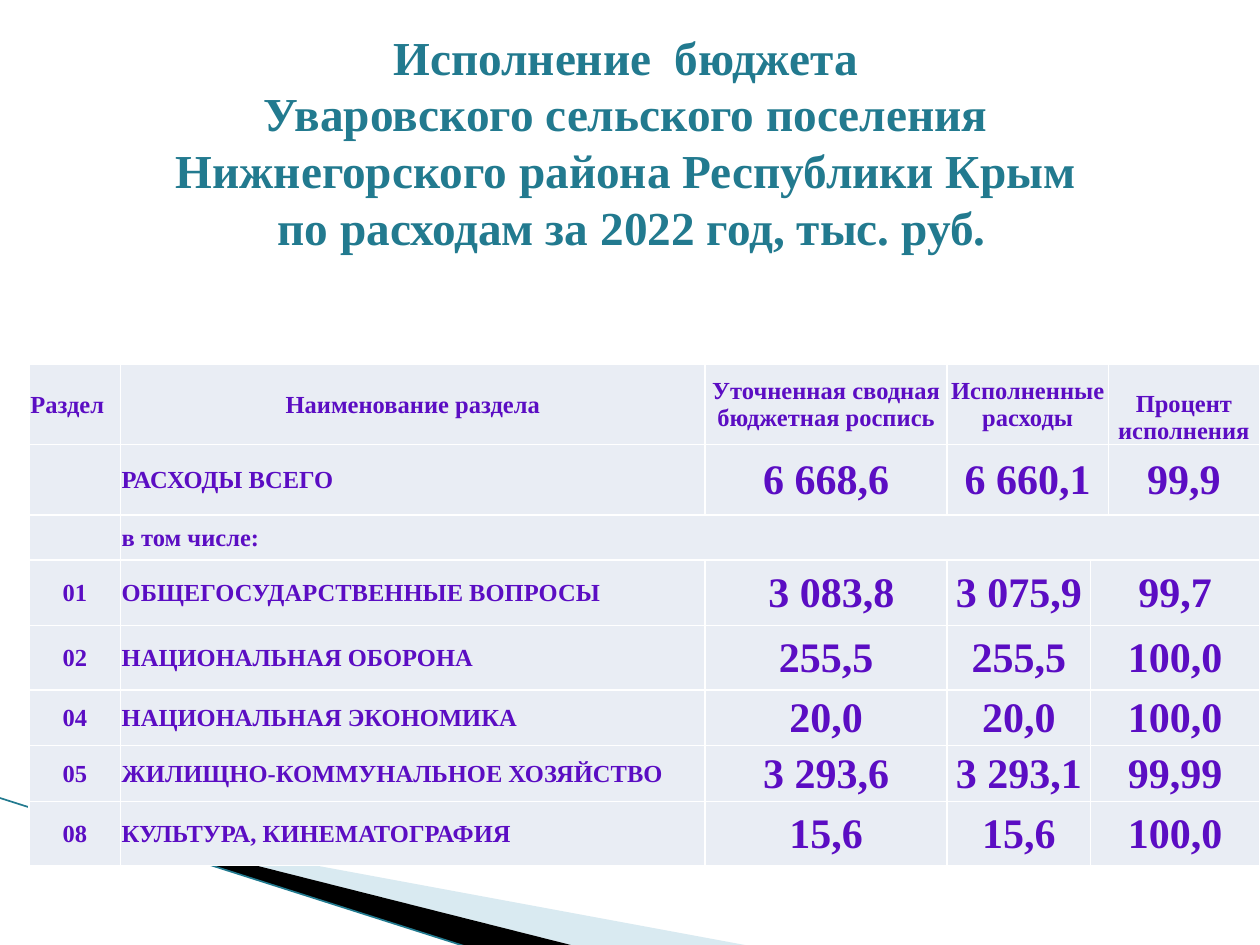
import dataclasses

import pptx
import pptx.dml.color
import pptx.enum.shapes
import pptx.enum.text
import pptx.oxml
import pptx.oxml.ns
import pptx.util

Pt = pptx.util.Pt
RGB = pptx.dml.color.RGBColor
ALIGN = pptx.enum.text.PP_ALIGN
ANCHOR = pptx.enum.text.MSO_ANCHOR
qn = pptx.oxml.ns.qn

TEAL = RGB(0x22, 0x7A, 0x8F)
PALE = RGB(0xA0, 0xCB, 0xDC)
BLACK = RGB(0, 0, 0)
VIOLET = RGB(0x5B, 0x0D, 0xC3)
CELL = RGB(0xE9, 0xED, 0xF4)
WHITE = RGB(0xFF, 0xFF, 0xFF)
FONT = "Times New Roman"

SMALL, BIG = 14, 24
COLS = (52.2, 334.1, 138.2, 82.1, 10.1, 86.4)


@dataclasses.dataclass
class Row:
    high: float
    texts: tuple[str, ...]
    span: tuple[int, int]  # first and last merged column


@dataclasses.dataclass
class Wedge:
    frame: tuple[float, float, float, float]  # the outline may leave it
    points: tuple[tuple[float, float], ...]
    color: RGB
    alpha: int  # percent


WEDGES = (
    Wedge((56.2, 393.8, 299.5, 113.8),
          ((39.6, 468.5), (428.4, 540.5), (328.3, 540.5), (39.6, 468)), PALE, 40),
    Wedge((-4.3, 455.8, 299.5, 66.2),
          ((38.2, 467.3), (329, 540.7), (267.8, 541.4), (38.9, 468)), BLACK, 100),
)

ROWS = (
    Row(45.9, ("Раздел", "Наименование раздела", "Уточненная сводная бюджетная роспись",
               "Исполненные расходы", "", "Процент исполнения"), (3, 4)),
    Row(40.4, ("", "РАСХОДЫ ВСЕГО", "6 668,6", "6 660,1", "", "99,9"), (3, 4)),
    Row(25.6, ("", "в том числе:", "", "", "", ""), (1, 5)),
    Row(37.6, ("01", "ОБЩЕГОСУДАРСТВЕННЫЕ ВОПРОСЫ", " 3 083,8", "3 075,9", "99,7", ""), (4, 5)),
    Row(36.7, ("02", "НАЦИОНАЛЬНАЯ ОБОРОНА", "255,5", "255,5", "100,0", ""), (4, 5)),
    Row(31.9, ("04", "НАЦИОНАЛЬНАЯ ЭКОНОМИКА", "20,0", "20,0", "100,0", ""), (4, 5)),
    Row(31.9, ("05", "ЖИЛИЩНО-КОММУНАЛЬНОЕ ХОЗЯЙСТВО", "3 293,6", "3 293,1", "99,99", ""), (4, 5)),
    Row(36.6, ("08", "КУЛЬТУРА, КИНЕМАТОГРАФИЯ", "15,6", "15,6", "100,0", ""), (4, 5)),
)

TITLE = ("Исполнение  бюджета \vУваровского сельского поселения \v"
         "Нижнегорского района Республики Крым \vпо расходам за 2022 год, тыс. руб.")


def write(frame, text: str, *, size: float, color: RGB, align=ALIGN.CENTER, pitch=None) -> None:
    """Fill a text frame; a vertical tab in the text breaks the line."""
    para = frame.paragraphs[0]
    para.text = text
    para.alignment = align
    if pitch:
        para.line_spacing = Pt(pitch)
    for font in (para.font, *(run.font for run in para.runs)):
        font.name, font.size, font.bold = FONT, Pt(size), True
        font.color.rgb = color


def draw_wedge(slide, wedge: Wedge) -> None:
    start, *rest = [(Pt(x), Pt(y)) for x, y in wedge.points]
    build = slide.shapes.build_freeform(*start)
    build.add_line_segments(rest, close=True)
    shape = build.convert_to_shape()
    shape.shadow.inherit = False
    shape.fill.solid()
    shape.fill.fore_color.rgb = wedge.color
    shape.line.fill.background()
    props = shape._element.spPr
    if wedge.alpha < 100:
        tint = props.find(qn("a:solidFill"))[0]
        tint.append(pptx.oxml.parse_xml(
            f'<a:alpha {pptx.oxml.ns.nsdecls("a")} val="{wedge.alpha * 1000}"/>'))
    # Set the frame and keep the outline in its place
    left, top, wide, high = (Pt(side) for side in wedge.frame)
    across, down = shape.left - left, shape.top - top
    shape.left, shape.top, shape.width, shape.height = left, top, wide, high
    for area in props.iter(qn("a:path")):
        area.set("w", str(int(wide)))
        area.set("h", str(int(high)))
    for point in props.iter(qn("a:pt")):
        point.set("x", str(int(point.get("x")) + across))
        point.set("y", str(int(point.get("y")) + down))


def draw_edge(slide) -> None:
    line = slide.shapes.add_connector(
        pptx.enum.shapes.MSO_CONNECTOR.STRAIGHT, Pt(-0.7), Pt(455.8), Pt(267.8), Pt(541.4))
    line.line.color.rgb = TEAL
    line.line.width = Pt(0.95)
    line._element.spPr.append(pptx.oxml.parse_xml(
        f"<a:effectLst {pptx.oxml.ns.nsdecls('a')}/>"))


def style_cell(cell) -> None:
    cell.margin_left = cell.margin_right = cell.margin_top = Pt(0.7)
    cell.margin_bottom = 0
    cell.vertical_anchor = ANCHOR.MIDDLE
    cell.fill.solid()
    cell.fill.fore_color.rgb = CELL
    # Borders come before the fill in the cell properties
    props = cell._tc.get_or_add_tcPr()
    for spot, side in enumerate("LRTB"):
        props.insert(spot, pptx.oxml.parse_xml(
            f'<a:ln{side} {pptx.oxml.ns.nsdecls("a")} w="{Pt(1)}"><a:solidFill>'
            f'<a:srgbClr val="{WHITE}"/></a:solidFill></a:ln{side}>'))


def draw_table(slide, rows: tuple[Row, ...]) -> None:
    table = slide.shapes.add_table(
        len(rows), len(COLS), Pt(16.7), Pt(208.1),
        Pt(sum(COLS)), Pt(sum(row.high for row in rows))).table
    for col, wide in zip(table.columns, COLS):
        col.width = Pt(wide)
    for r, row in enumerate(rows):
        table.rows[r].height = Pt(row.high)
        for c, text in enumerate(row.texts):
            cell = table.cell(r, c)
            style_cell(cell)
            head = r == 0
            left = c == 0 if head else c == 1
            write(cell.text_frame, text, color=VIOLET,
                  size=BIG if text and c > 1 and not head else SMALL,
                  align=ALIGN.LEFT if left else ALIGN.CENTER)
        first, last = row.span
        table.cell(r, first).merge(table.cell(r, last))
    table.cell(0, len(COLS) - 1).vertical_anchor = ANCHOR.BOTTOM


def main() -> None:
    deck = pptx.Presentation()
    deck.slide_width, deck.slide_height = Pt(720), Pt(540)
    slide = deck.slides.add_slide(deck.slide_layouts[6])

    # Corner decoration
    for wedge in WEDGES:
        draw_wedge(slide, wedge)
    draw_edge(slide)

    # Budget table
    draw_table(slide, ROWS)

    # Title
    frame = slide.shapes.add_textbox(Pt(36.9), 0, Pt(648), Pt(161.6)).text_frame
    frame.word_wrap = True
    frame.vertical_anchor = ANCHOR.MIDDLE
    write(frame, TITLE, size=27, color=TEAL, pitch=32.4)

    deck.save("out.pptx")


if __name__ == "__main__":
    main()
